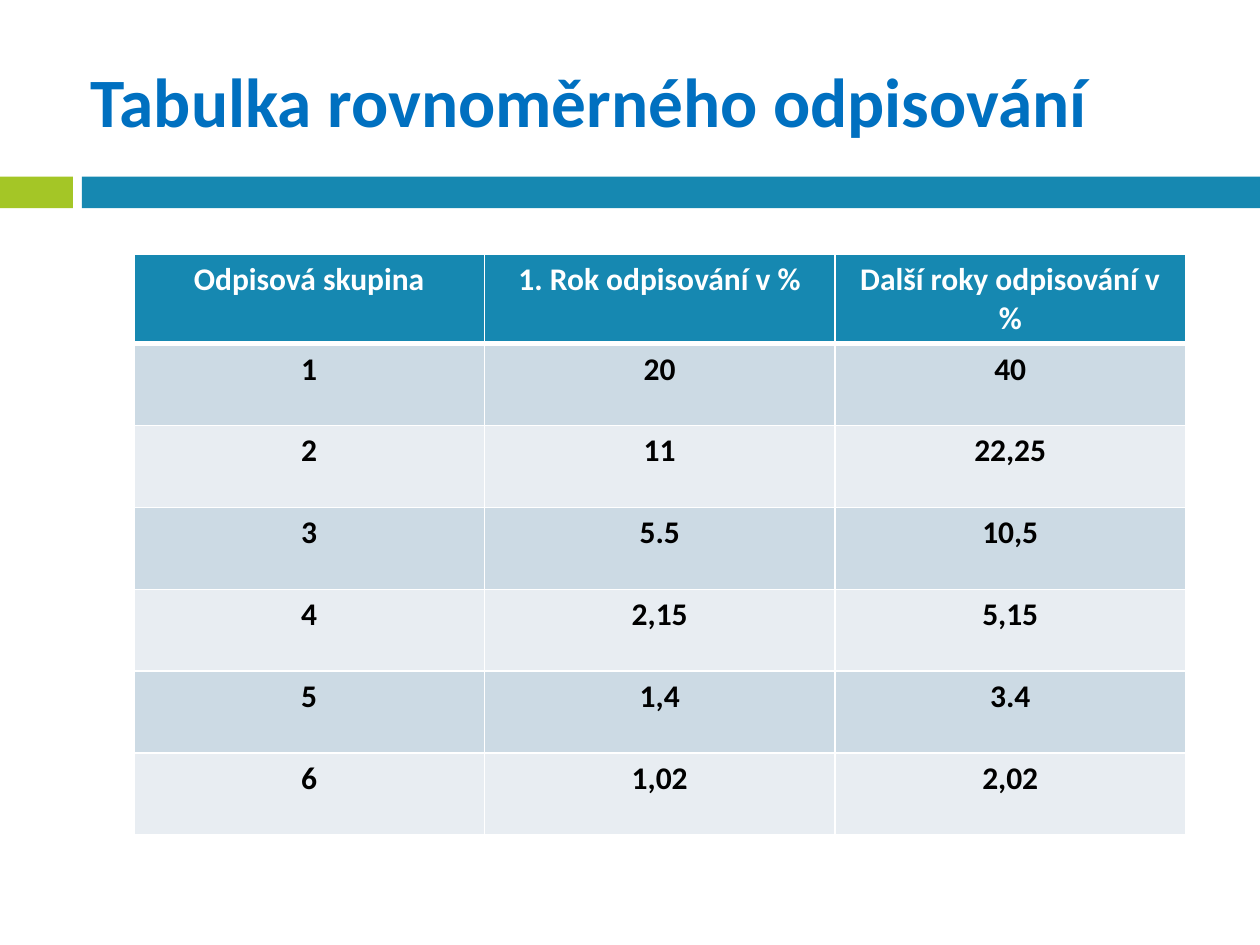
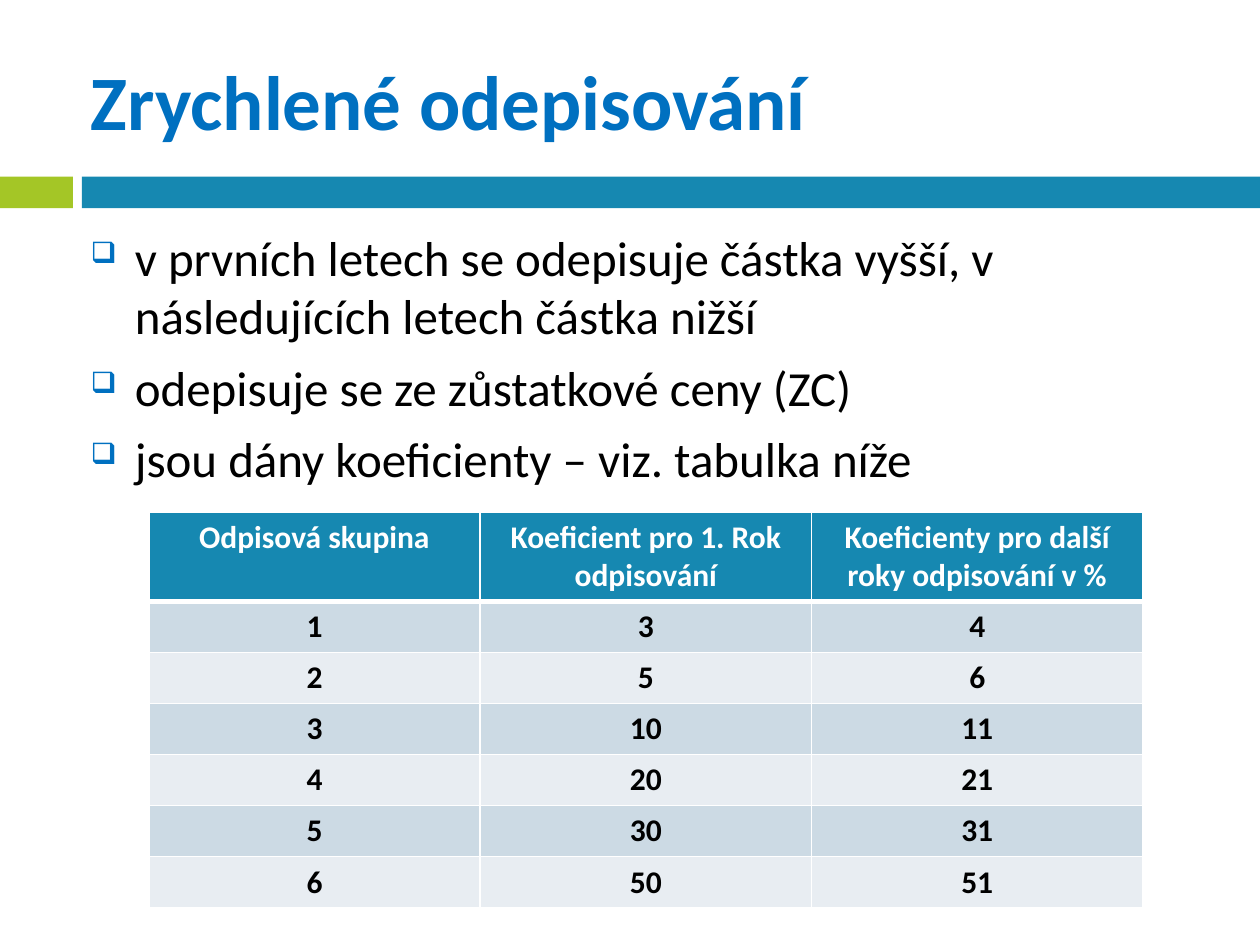
from lxml.etree import SubElement
from pptx import Presentation
from pptx.dml.color import RGBColor
from pptx.enum.shapes import MSO_SHAPE as Shape
from pptx.enum.text import MSO_ANCHOR as Anchor, PP_ALIGN as Align
from pptx.oxml.ns import qn
from pptx.util import Cm, Pt

COLORS = {
    "title": "0070C0",
    "green": "A4C626",
    "blue": "1688B1",
    "band_dark": "CCDAE4",
    "band_light": "E8EDF2",
    "text": "000000",
    "white": "FFFFFF",
}
FONT = "Calibri"
SLIDE_WIDTH, SLIDE_HEIGHT = 25.4, 19.05
BAND_TOP, BAND_HEIGHT = 3.56, 0.64
INSET = 0.13
BULLET_INDENT = 0.89


def color(name):
    return RGBColor.from_string(COLORS[name])


def write(para, text, size=18, ink="text", bold=False, align=Align.LEFT):
    """Put one formatted run of text into a paragraph."""
    para.alignment = align
    span = para.add_run()
    span.text = text
    span.font.name = FONT
    span.font.size = Pt(size)
    span.font.bold = bold
    span.font.color.rgb = color(ink)


def add_bullet(para):
    """Give a paragraph a hanging box bullet."""
    props = para._p.get_or_add_pPr()
    props.set("marL", str(Cm(BULLET_INDENT)))
    props.set("indent", str(-Cm(BULLET_INDENT)))
    bullet_color = SubElement(props, qn("a:buClr"))
    SubElement(bullet_color, qn("a:srgbClr"), val=COLORS["title"])
    SubElement(props, qn("a:buSzPct"), val="60000")
    SubElement(props, qn("a:buChar"), char="❑")


def add_borders(cell, **widths):
    """Draw white cell borders; widths are points by side (L, R, T, B)."""
    props = cell._tc.get_or_add_tcPr()
    for side in "LRTB":
        line = SubElement(props, qn(f"a:ln{side}"), w=str(Pt(widths.get(side, 1))))
        fill = SubElement(line, qn("a:solidFill"))
        SubElement(fill, qn("a:srgbClr"), val=COLORS["white"])


class SlideBuilder:
    def __init__(self, deck):
        self.deck = deck
        self.page = None

    def start(self, title, title_size):
        """Open a slide with the shared bands and title."""
        self.page = self.deck.slides.add_slide(self.deck.slide_layouts[6])
        self.band(0, 1.47, "green")
        self.band(1.65, SLIDE_WIDTH - 1.65, "blue")
        frame = self.text_frame(1.7, 0.64, 22.66, 2.74, Anchor.MIDDLE)
        write(frame.paragraphs[0], title, size=title_size, ink="title", bold=True)

    def band(self, left, width, fill):
        box = self.page.shapes.add_shape(
            Shape.RECTANGLE, Cm(left), Cm(BAND_TOP), Cm(width), Cm(BAND_HEIGHT))
        box.shadow.inherit = False
        box.fill.solid()
        box.fill.fore_color.rgb = color(fill)
        box.line.fill.background()

    def text_frame(self, left, top, width, height, anchor=Anchor.TOP):
        box = self.page.shapes.add_textbox(Cm(left), Cm(top), Cm(width), Cm(height))
        frame = box.text_frame
        frame.word_wrap = True
        frame.vertical_anchor = anchor
        frame.margin_left = frame.margin_right = Cm(INSET)
        frame.margin_top = frame.margin_bottom = Cm(INSET)
        return frame

    def bullets(self, lines):
        frame = self.text_frame(1.7, 4.45, 23.39, 14.27)
        for index, line in enumerate(lines):
            para = frame.add_paragraph() if index else frame.paragraphs[0]
            para.space_before = Pt(7)
            add_bullet(para)
            write(para, line, size=28)

    def table(self, rows, left, top, width, row_height, header_height=1.8):
        columns = len(rows[0])
        height = header_height + row_height * (len(rows) - 1)
        table = self.page.shapes.add_table(
            len(rows), columns, Cm(left), Cm(top), Cm(width), Cm(height)).table
        for column in table.columns:
            column.width = Cm(width / columns)
        for number, values in enumerate(rows):
            header = number == 0
            table.rows[number].height = Cm(header_height if header else row_height)
            band = "blue" if header else ("band_light", "band_dark")[number % 2]
            for cell, value in zip(table.rows[number].cells, values):
                add_borders(cell, T=3 if number == 1 else 1, B=3 if header else 1)
                cell.fill.solid()
                cell.fill.fore_color.rgb = color(band)
                write(cell.text_frame.paragraphs[0], value, bold=True,
                      ink="white" if header else "text", align=Align.CENTER)


def main():
    deck = Presentation()
    deck.slide_width, deck.slide_height = Cm(SLIDE_WIDTH), Cm(SLIDE_HEIGHT)
    builder = SlideBuilder(deck)

    # Straight-line depreciation
    builder.start("Tabulka rovnoměrného odpisování", 39.6)
    builder.table([
        ("Odpisová skupina", "1. Rok odpisování v %", "Další roky odpisování v %"),
        ("1", "20", "40"),
        ("2", "11", "22,25"),
        ("3", "5.5", "10,5"),
        ("4", "2,15", "5,15"),
        ("5", "1,4", "3.4"),
        ("6", "1,02", "2,02"),
    ], left=2.7, top=5.13, width=21.2, row_height=1.65)

    # Accelerated depreciation
    builder.start("Zrychlené odepisování", 44)
    builder.bullets([
        "v prvních letech se odepisuje částka vyšší, v následujících letech částka nižší",
        "odepisuje se ze zůstatkové ceny (ZC)",
        "jsou dány koeficienty – viz. tabulka níže",
    ])
    builder.table([
        ("Odpisová skupina", "Koeficient pro 1. Rok odpisování",
         "Koeficienty pro další roky odpisování v %"),
        ("1", "3", "4"),
        ("2", "5", "6"),
        ("3", "10", "11"),
        ("4", "20", "21"),
        ("5", "30", "31"),
        ("6", "50", "51"),
    ], left=3, top=10.32, width=20.04, row_height=1.03)

    deck.save("out.pptx")


if __name__ == "__main__":
    main()
